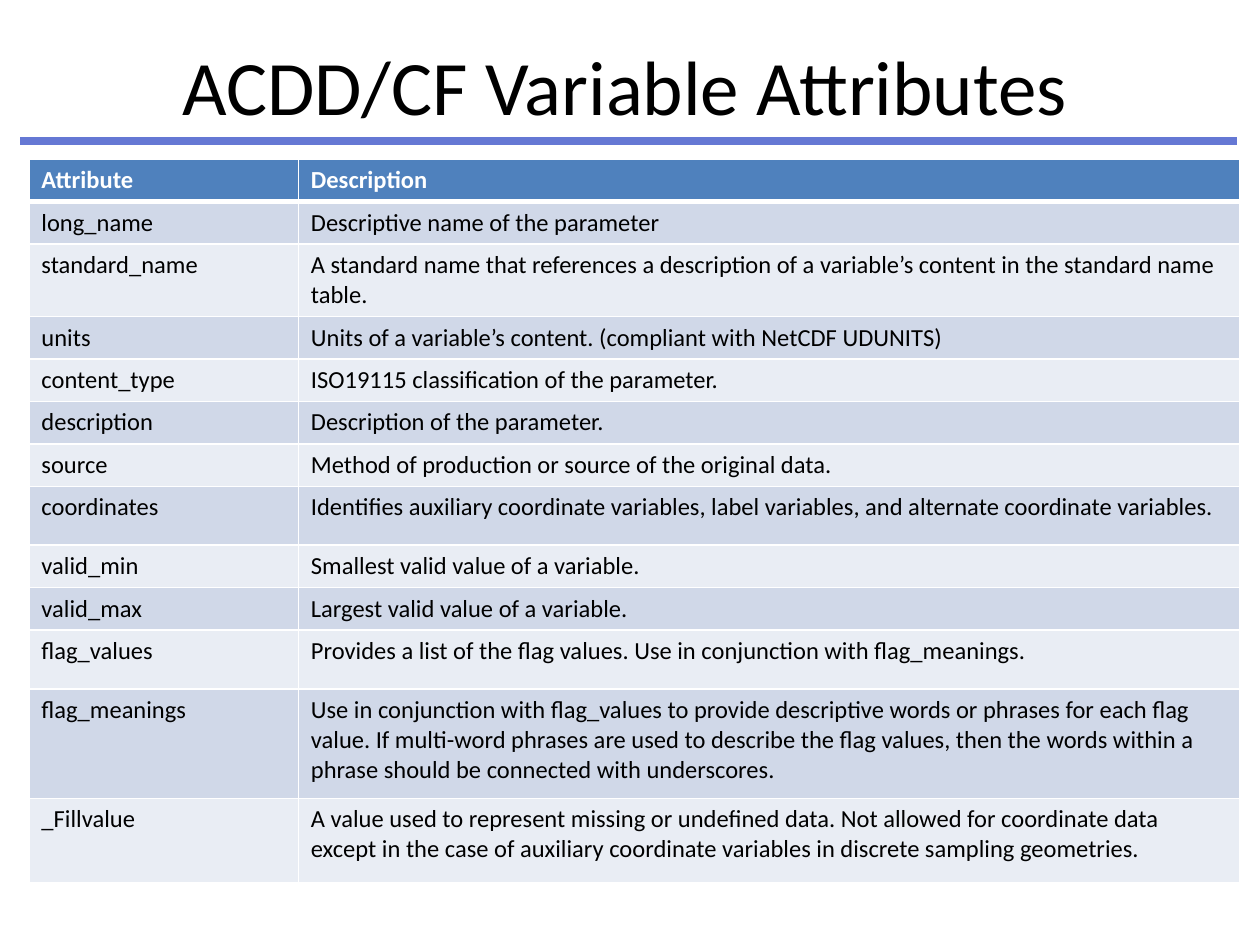
"""Build a slide with a table of ACDD/CF variable attributes."""
from dataclasses import dataclass

from lxml.etree import SubElement
from pptx import Presentation
from pptx.dml.color import RGBColor as Rgb
from pptx.enum.shapes import MSO_CONNECTOR as Connector
from pptx.enum.text import MSO_ANCHOR as Anchor, PP_ALIGN as Align
from pptx.oxml.ns import qn
from pptx.util import Pt

COLORS = {
    "text": "000000",
    "white": "FFFFFF",
    "rule": "6578D4",
    "header": "4F81BD",
    "band_dark": "D0D8E8",
    "band_light": "E9EDF4",
}
FONT = "Calibri"
COLUMN_WIDTHS = (154, 538)


@dataclass(frozen=True)
class Attribute:
    """One table row: a name, what it means and the row height in points."""
    name: str
    description: str
    height: float = 23


ROWS = (
    Attribute("Attribute", "Description"),
    Attribute("long_name", "Descriptive name of the parameter"),
    Attribute("standard_name", "A standard name that references a description of a variable’s "
              "content in the standard name table.", 39),
    Attribute("units", "Units of a variable’s content. (compliant with NetCDF UDUNITS)"),
    Attribute("content_type", "ISO19115 classification of the parameter."),
    Attribute("description", "Description of the parameter."),
    Attribute("source", "Method of production or source of the original data."),
    Attribute("coordinates", "Identifies auxiliary coordinate variables, label variables, and "
              "alternate coordinate variables.", 33.6),
    Attribute("valid_min", "Smallest valid value of a variable."),
    Attribute("valid_max", "Largest valid value of a variable."),
    Attribute("flag_values", "Provides a list of the flag values. Use in conjunction with "
              "flag_meanings.", 33.6),
    Attribute("flag_meanings", "Use in conjunction with flag_values to provide descriptive words "
              "or phrases for each flag value. If multi-word phrases are used to describe the flag "
              "values, then the words within a phrase should be connected with underscores.", 62.6),
    Attribute("_Fillvalue", "A value used to represent missing or undefined data. Not allowed for "
              "coordinate data except in the case of auxiliary coordinate variables in discrete "
              "sampling geometries.", 48),
)


def color(name: str) -> Rgb:
    """Return the named colour."""
    return Rgb.from_string(COLORS[name])


def write(frame, text: str, *, size: float, ink: str = "text", bold: bool = False,
          align: Align = Align.LEFT) -> None:
    """Put one formatted paragraph in a text frame."""
    para = frame.paragraphs[0]
    para.alignment = align
    span = para.add_run()
    span.text = text
    font = span.font
    font.name, font.size, font.bold = FONT, Pt(size), bold
    font.color.rgb = color(ink)


def add_borders(cell, bottom: float, top: float) -> None:
    """Give a cell white borders, with its own top and bottom widths."""
    properties = cell._tc.get_or_add_tcPr()
    for tag, width in (("a:lnL", 1), ("a:lnR", 1), ("a:lnT", top), ("a:lnB", bottom)):
        border = SubElement(properties, qn(tag), w=str(Pt(width)))
        fill = SubElement(border, qn("a:solidFill"))
        SubElement(fill, qn("a:srgbClr"), val=COLORS["white"])


def add_title(slide, text: str) -> None:
    """Place the title and the rule that runs behind it."""
    title = slide.shapes.title
    title.left, title.top, title.width, title.height = Pt(71.5), Pt(3.6), Pt(571.5), Pt(90)
    title.text_frame.vertical_anchor = Anchor.MIDDLE
    write(title.text_frame, text, size=44, align=Align.CENTER)
    rule = slide.shapes.add_connector(Connector.STRAIGHT, Pt(11.5), Pt(80.5), Pt(707), Pt(80.5))
    rule.line.color.rgb = color("rule")
    rule.line.width = Pt(4.5)
    SubElement(rule.element.spPr, qn("a:effectLst"))
    title.element.addprevious(rule.element)


def add_attribute_table(slide, rows: tuple[Attribute, ...]) -> None:
    """Draw the header and the banded attribute rows."""
    height = sum(row.height for row in rows)
    table = slide.shapes.add_table(len(rows), len(COLUMN_WIDTHS), Pt(16.5), Pt(91),
                                   Pt(sum(COLUMN_WIDTHS)), Pt(height)).table
    for column, width in zip(table.columns, COLUMN_WIDTHS):
        column.width = Pt(width)
    for index, row in enumerate(rows):
        table.rows[index].height = Pt(row.height)
        header = index == 0
        band = "header" if header else "band_dark" if index % 2 else "band_light"
        for column, text in enumerate((row.name, row.description)):
            cell = table.cell(index, column)
            add_borders(cell, bottom=3 if header else 1, top=3 if index == 1 else 1)
            cell.fill.solid()
            cell.fill.fore_color.rgb = color(band)
            write(cell.text_frame, text, size=14, ink="white" if header else "text", bold=header)


def main() -> None:
    """Build and save the deck."""
    deck = Presentation()
    deck.slide_width, deck.slide_height = Pt(720), Pt(540)
    page = deck.slides.add_slide(deck.slide_layouts[5])
    add_title(page, "ACDD/CF Variable Attributes")
    add_attribute_table(page, ROWS)
    deck.save("out.pptx")


if __name__ == "__main__":
    main()
